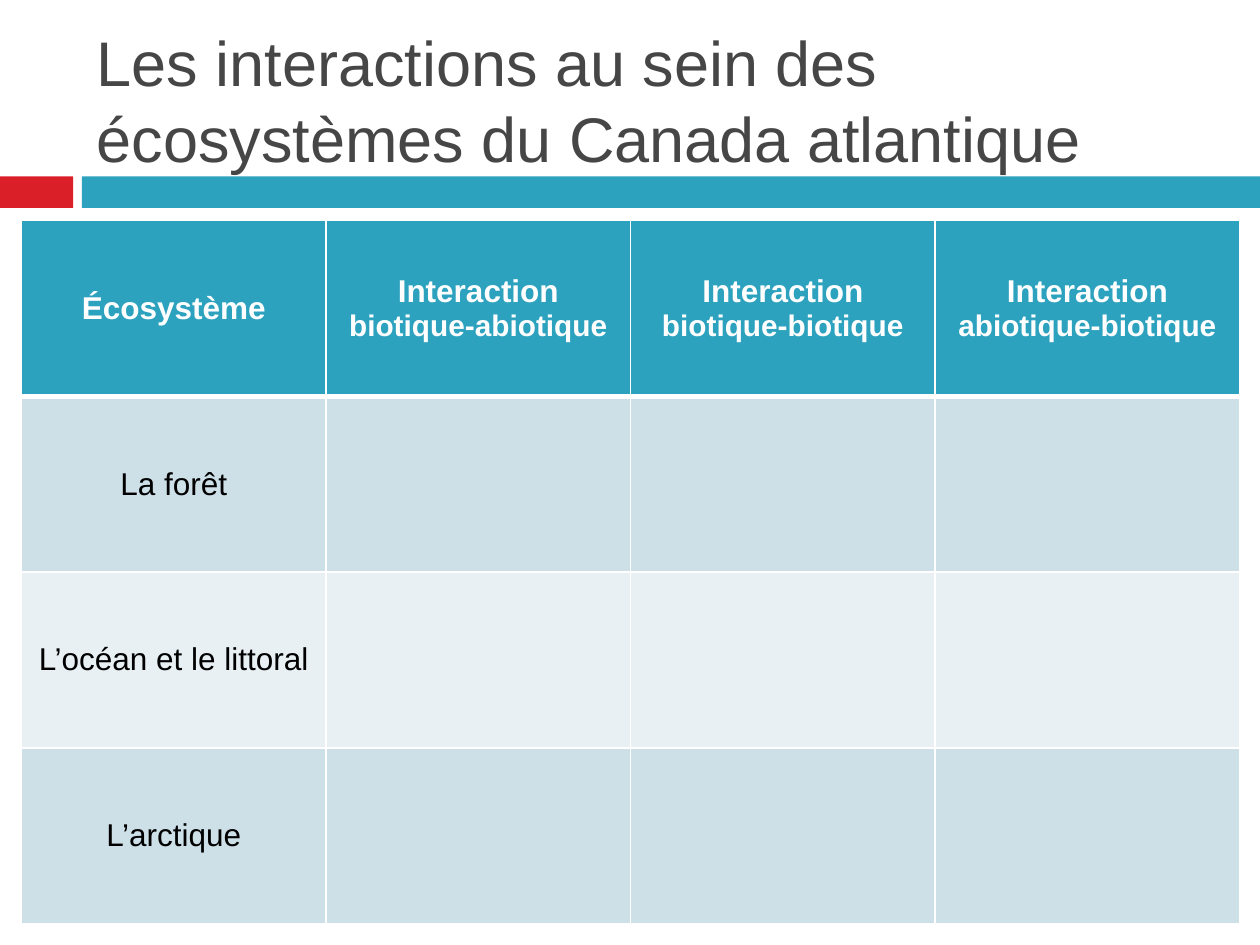
from lxml import etree
from pptx import Presentation
from pptx.dml.color import RGBColor
from pptx.enum.shapes import MSO_SHAPE
from pptx.enum.text import MSO_ANCHOR, PP_ALIGN
from pptx.oxml.ns import qn
from pptx.util import Inches, Pt

RECTANGLE = MSO_SHAPE.RECTANGLE
MIDDLE = MSO_ANCHOR.MIDDLE
CENTER = PP_ALIGN.CENTER

FONT = "Arial"
RED, TEAL, GREY = "DA1F28", "2DA2BF", "464646"
WHITE, BLACK = "FFFFFF", "000000"
BANDS = ["CDE0E8", "E8F0F4"]

# Each header is a list of (text, size) runs
HEADERS = [[("Écosystème", 18)]] + [
    [("Interaction ", 18), (pair, 17)]
    for pair in ("biotique-abiotique", "biotique-biotique", "abiotique-biotique")
]
ECOSYSTEMS = ["La forêt", "L’océan et le littoral", "L’arctique"]


def color(value):
    return RGBColor.from_string(value)


def add_run(paragraph, text, size, text_color, bold=False):
    run = paragraph.add_run()
    run.text = text
    run.font.name = FONT
    run.font.size = Pt(size)
    run.font.bold = bold
    run.font.color.rgb = color(text_color)


def add_title(slide, left, top, width, height):
    text_frame = slide.shapes.add_textbox(left, top, width, height).text_frame
    text_frame.word_wrap = True
    text_frame.vertical_anchor = MIDDLE
    add_run(text_frame.paragraphs[0],
            "Les interactions au sein des écosystèmes du Canada atlantique", 36, GREY)


def add_band(slide, left, top, width, height):
    # Short red block, a gap, then teal to the right edge
    red_width, teal_offset = Inches(0.58), Inches(0.65)
    parts = [(left, red_width, RED),
             (left + teal_offset, width - teal_offset, TEAL)]
    for part_left, part_width, fill in parts:
        shape = slide.shapes.add_shape(RECTANGLE, part_left, top, part_width, height)
        shape.shadow.inherit = False
        shape.fill.solid()
        shape.fill.fore_color.rgb = color(fill)
        shape.line.fill.background()


def set_borders(cell, top_width, bottom_width):
    properties = cell._tc.get_or_add_tcPr()
    widths = {"a:lnL": 1, "a:lnR": 1, "a:lnT": top_width, "a:lnB": bottom_width}
    for tag, width in widths.items():
        line = etree.SubElement(properties, qn(tag), w=str(Pt(width)))
        fill = etree.SubElement(line, qn("a:solidFill"))
        etree.SubElement(fill, qn("a:srgbClr"), val=WHITE)


def add_ecosystem_table(slide, left, top, width, height):
    row_count, column_count = len(ECOSYSTEMS) + 1, len(HEADERS)
    table = slide.shapes.add_table(row_count, column_count, left, top, width, height).table

    # Fills and borders
    for row in range(row_count):
        for column in range(column_count):
            cell = table.cell(row, column)
            set_borders(cell, 3 if row == 1 else 1, 3 if row == 0 else 1)
            cell.fill.solid()
            cell.fill.fore_color.rgb = color(BANDS[(row - 1) % 2] if row else TEAL)
            cell.vertical_anchor = MIDDLE
            cell.text_frame.paragraphs[0].alignment = CENTER

    # Header row
    for column, runs in enumerate(HEADERS):
        paragraph = table.cell(0, column).text_frame.paragraphs[0]
        for text, size in runs:
            add_run(paragraph, text, size, WHITE, bold=True)

    # Ecosystem names
    for row, name in enumerate(ECOSYSTEMS, start=1):
        add_run(table.cell(row, 0).text_frame.paragraphs[0], name, 18, BLACK)


def main():
    presentation = Presentation()
    presentation.slide_width = Inches(10)
    presentation.slide_height = Inches(7.5)
    slide = presentation.slides.add_slide(presentation.slide_layouts[6])
    add_band(slide, 0, Inches(1.4), presentation.slide_width, Inches(0.25))
    add_title(slide, Inches(0.67), Inches(0.25), Inches(8.92), Inches(1.08))
    add_ecosystem_table(slide, Inches(0.17), Inches(1.75), Inches(9.67), Inches(5.58))
    presentation.save("out.pptx")


if __name__ == "__main__":
    main()
